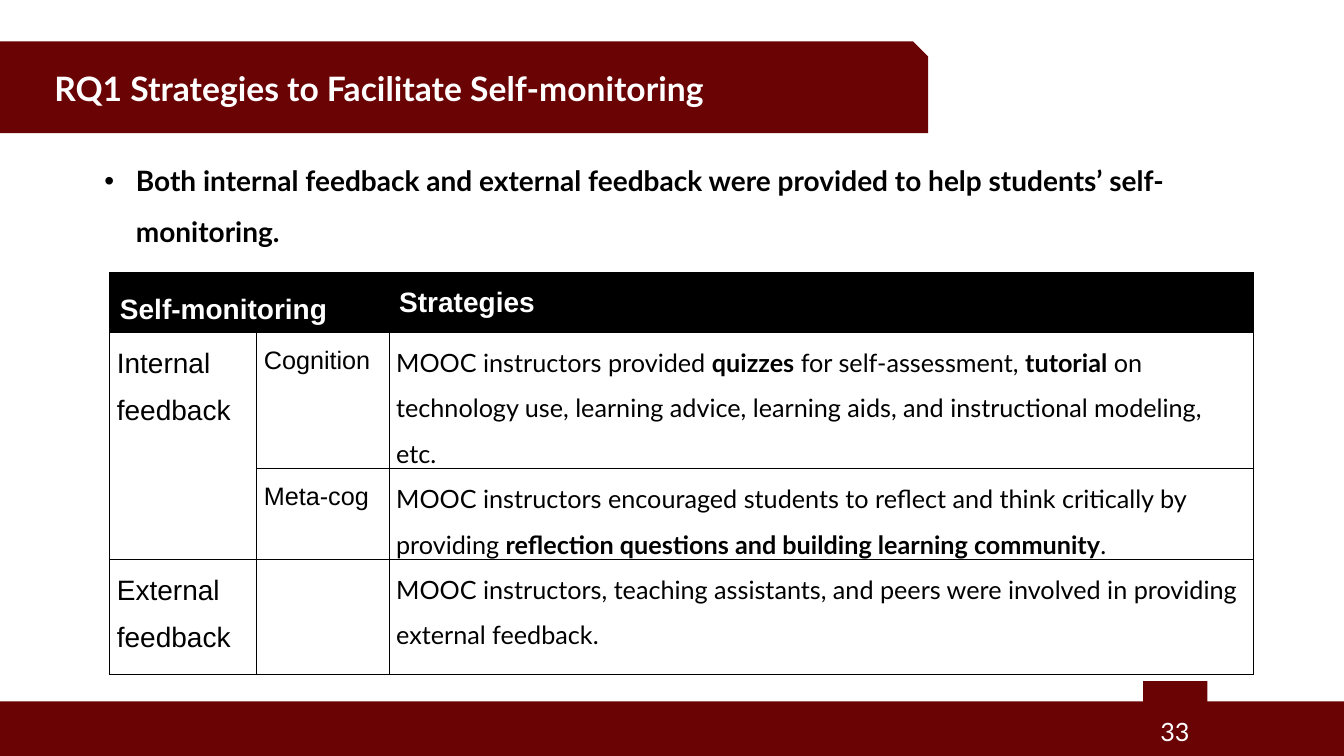
from lxml.etree import SubElement
from pptx import Presentation
from pptx.dml.color import RGBColor
from pptx.enum.shapes import MSO_SHAPE as Shape
from pptx.enum.text import MSO_ANCHOR as Anchor, PP_ALIGN as Align
from pptx.oxml import parse_xml
from pptx.oxml.ns import nsdecls, qn
from pptx.util import Pt

MAROON = RGBColor(0x69, 0x03, 0x04)
BLACK = RGBColor(0x00, 0x00, 0x00)
WHITE = RGBColor(0xFF, 0xFF, 0xFF)

COLUMN_WIDTHS = [105, 94.5, 617.5]
ROW_HEIGHTS = [40.5, 91.5, 61, 82]
# Each strategy is a list of (text, bold) runs
FEEDBACK_ROWS = [
    ("Internal feedback", "Cognition", [
        ("MOOC instructors provided ", False), ("quizzes", True),
        (" for self-assessment, ", False), ("tutorial", True),
        (" on technology use, learning advice, learning aids, "
         "and instructional modeling, etc.", False)]),
    ("", "Meta-cog", [
        ("MOOC instructors encouraged students to reflect and think "
         "critically by providing ", False),
        ("reflection questions and building learning community", True),
        (".", False)]),
    ("External feedback", "", [
        ("MOOC instructors, teaching assistants, and peers were involved "
         "in providing external feedback.", False)]),
]


def write(frame, text, size=18, font="Lato", color=BLACK, bold=False,
          align=Align.LEFT, spacing=None):
    """Write a string or a list of (text, bold) runs as one paragraph."""
    paragraph = frame.paragraphs[0]
    paragraph.alignment = align
    if spacing:
        paragraph.line_spacing = spacing
    for words, is_bold in [(text, bold)] if isinstance(text, str) else text:
        run = paragraph.add_run()
        run.text = words
        run.font.size = Pt(size)
        run.font.name = font
        run.font.bold = is_bold
        run.font.color.rgb = color
    return paragraph


def add_block(slide, preset, left, top, width, height):
    block = slide.shapes.add_shape(preset, Pt(left), Pt(top), Pt(width), Pt(height))
    block.shadow.inherit = False
    block.fill.solid()
    block.fill.fore_color.rgb = MAROON
    block.line.fill.background()


def add_text(slide, left, top, width, height, text, anchor=Anchor.MIDDLE, **style):
    frame = slide.shapes.add_textbox(
        Pt(left), Pt(top), Pt(width), Pt(height)).text_frame
    frame.word_wrap = True
    frame.vertical_anchor = anchor
    return write(frame, text, **style)


def set_borders(cell):
    properties = cell._tc.get_or_add_tcPr()
    for index, (side, width) in enumerate([("L", 1), ("R", 1), ("T", 0.75), ("B", 0.75)]):
        properties.insert(index, parse_xml(
            f'<a:ln{side} {nsdecls("a")} w="{Pt(width)}"><a:solidFill>'
            f'<a:srgbClr val="{BLACK}"/></a:solidFill></a:ln{side}>'))


def add_title_banner(slide, left, top, width, height):
    add_block(slide, Shape.SNIP_1_RECTANGLE, left, top, width, height)
    add_text(slide, left + 31.7, top + 7.9, width - 54.6, height - 15,
             "RQ1 Strategies to Facilitate Self-monitoring",
             size=24, color=WHITE, bold=True)


def add_key_point(slide, left, top, width, height):
    point = add_text(
        slide, left, top, width, height,
        "Both internal feedback and external feedback were provided "
        "to help students’ self-monitoring.",
        anchor=Anchor.TOP, size=20, bold=True, spacing=1.5)
    # Hanging bullet
    properties = point._p.get_or_add_pPr()
    properties.set("marL", str(Pt(58.3)))
    properties.set("indent", str(-Pt(22.5)))
    SubElement(properties, qn("a:buFont"), typeface="Arial")
    SubElement(properties, qn("a:buChar"), char="•")


def add_strategy_table(slide, left, top, width, height):
    table = slide.shapes.add_table(
        len(ROW_HEIGHTS), len(COLUMN_WIDTHS),
        Pt(left), Pt(top), Pt(width), Pt(height)).table
    for column, column_width in zip(table.columns, COLUMN_WIDTHS):
        column.width = Pt(column_width)
    for row, row_height in zip(table.rows, ROW_HEIGHTS):
        row.height = Pt(row_height)

    # Fills, borders and margins
    for row_index, row in enumerate(table.rows):
        for cell in row.cells:
            if row_index == 0:
                cell.fill.solid()
                cell.fill.fore_color.rgb = BLACK
                cell.vertical_anchor = Anchor.MIDDLE
            else:
                cell.fill.background()
                cell.margin_left = cell.margin_right = Pt(5)
                cell.margin_top = cell.margin_bottom = Pt(0)
            set_borders(cell)
    table.cell(0, 0).merge(table.cell(0, 1))
    table.cell(1, 0).merge(table.cell(2, 0))

    # Header and feedback rows
    header = dict(size=20, font="Arial", color=WHITE, bold=True)
    write(table.cell(0, 0).text_frame, "Self-monitoring", spacing=1.5, **header)
    write(table.cell(0, 2).text_frame, "Strategies", **header)
    styles = [dict(size=20, font="Arial"), dict(font="Arial"), {}]
    for row_index, contents in enumerate(FEEDBACK_ROWS, start=1):
        for column_index, (text, style) in enumerate(zip(contents, styles)):
            if text:
                write(table.cell(row_index, column_index).text_frame, text,
                      spacing=1.5, **style)


def add_footer(slide, left, top, width, height):
    add_block(slide, Shape.RECTANGLE, left, top, width, height)
    # Tab behind the page number
    add_block(slide, Shape.RECTANGLE, left + 816.5, top - 14.5, 46, 47.5)
    add_text(slide, left + 694.8, top + 7.2, 162, 28.8, "33",
             color=WHITE, align=Align.RIGHT)


def main():
    deck = Presentation()
    deck.slide_width, deck.slide_height = Pt(960), Pt(540)
    slide = deck.slides.add_slide(deck.slide_layouts[6])
    add_footer(slide, 0, 501, 960, 39)
    add_title_banner(slide, 0, 29.5, 663, 65.5)
    add_strategy_table(slide, 78.5, 194.3, sum(COLUMN_WIDTHS), sum(ROW_HEIGHTS))
    add_key_point(slide, 31.7, 101.5, 817, 74)
    deck.save("out.pptx")


if __name__ == "__main__":
    main()
